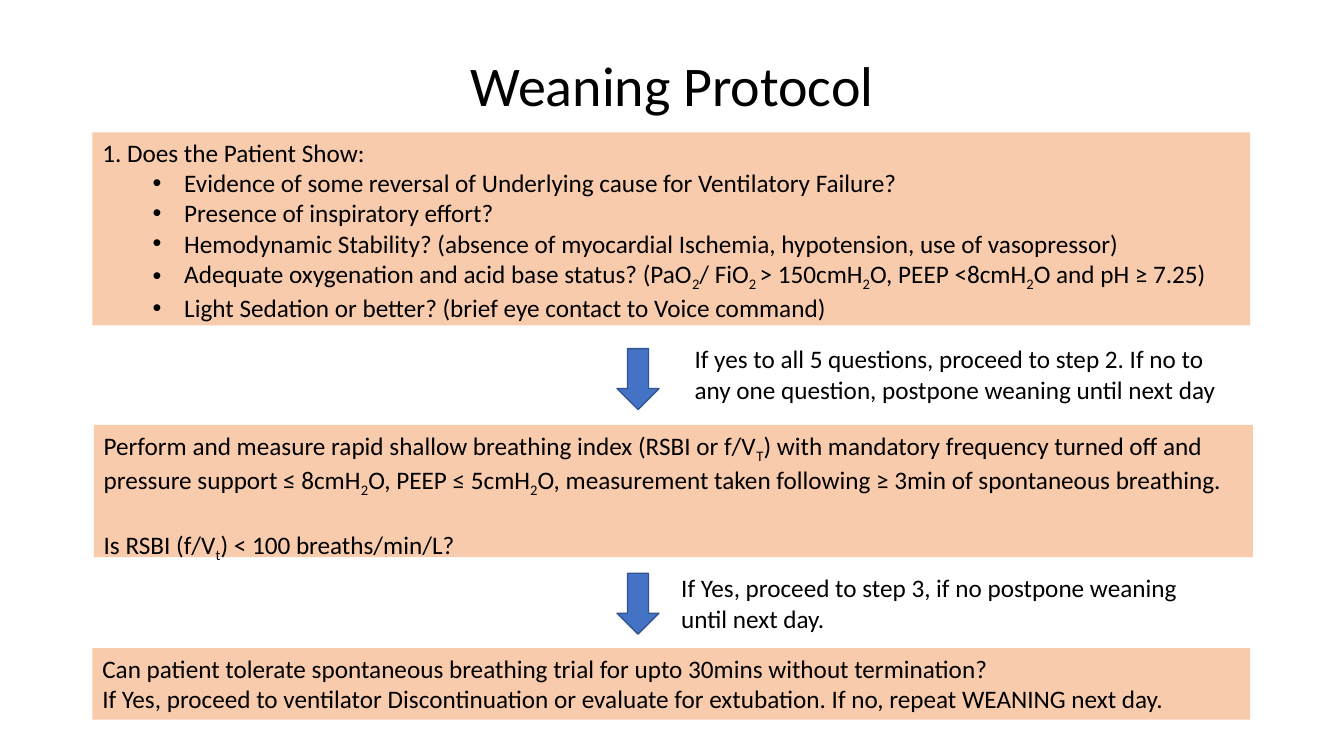
from lxml import etree
from pptx import Presentation
from pptx.dml.color import RGBColor
from pptx.enum.shapes import MSO_SHAPE
from pptx.enum.text import MSO_ANCHOR, PP_ALIGN
from pptx.oxml.ns import qn
from pptx.util import Pt

RECTANGLE = MSO_SHAPE.RECTANGLE
DOWN_ARROW = MSO_SHAPE.DOWN_ARROW
TOP, MIDDLE = MSO_ANCHOR.TOP, MSO_ANCHOR.MIDDLE
LEFT, CENTER = PP_ALIGN.LEFT, PP_ALIGN.CENTER

COLORS = {"text": "000000", "step": "F8CBAD", "arrow": "4472C4", "arrow_line": "325491"}
FONT = "Calibri"


def color(name):
    return RGBColor.from_string(COLORS[name])


def write_text(shape, lines, size=18, align=LEFT, anchor=TOP, line_spacing=1.0,
               bullets_from=None, last_gap=0):
    frame = shape.text_frame
    frame.word_wrap = True
    frame.vertical_anchor = anchor
    for index, line in enumerate(lines):
        paragraph = frame.paragraphs[0] if index == 0 else frame.add_paragraph()
        paragraph.alignment = align
        paragraph.line_spacing = line_spacing
        if last_gap and index == len(lines) - 1:
            paragraph.space_before = Pt(last_gap)
        if bullets_from is not None and index >= bullets_from:
            paragraph.level = 1
            properties = paragraph._p.get_or_add_pPr()
            properties.set("marL", str(Pt(58.5)))
            properties.set("indent", str(Pt(-22.5)))
            etree.SubElement(properties, qn("a:buFont")).set("typeface", "Arial")
            etree.SubElement(properties, qn("a:buChar")).set("char", "•")
        for position, part in enumerate(line.split("~")):
            run = paragraph.add_run()
            run.text = part
            run.font.size = Pt(size)
            run.font.name = FONT
            run.font.color.rgb = color("text")
            if position % 2:
                run.font._element.set("baseline", "-25000")


presentation = Presentation()
presentation.slide_width = Pt(960)
presentation.slide_height = Pt(540)
slide = presentation.slides.add_slide(presentation.slide_layouts[6])

title = slide.shapes.add_textbox(Pt(66), Pt(28.75), Pt(828), Pt(69))
write_text(title, ["Weaning Protocol"], size=40, align=CENTER, anchor=MIDDLE, line_spacing=0.9)

steps = [
    (66, 94.5, 827, 138, {"bullets_from": 1}, [
        "1. Does the Patient Show:",
        "Evidence of some reversal of Underlying cause for Ventilatory Failure?",
        "Presence of inspiratory effort?",
        "Hemodynamic Stability? (absence of myocardial Ischemia, hypotension, use of vasopressor)",
        "Adequate oxygenation and acid base status? "
        "(PaO~2~/ FiO~2 ~> 150cmH~2~O, PEEP <8cmH~2~O and pH ≥ 7.25)",
        "Light Sedation or better? (brief eye contact to Voice command)",
    ]),
    (67, 303.5, 828, 94.5, {"last_gap": 22}, [
        "Perform and measure rapid shallow breathing index (RSBI or f/V~T~) with mandatory "
        "frequency turned off and pressure support ≤ 8cmH~2~O, PEEP ≤ 5cmH~2~O, "
        "measurement taken following ≥ 3min of spontaneous breathing.",
        "Is RSBI (f/V~t~) < 100 breaths/min/L?",
    ]),
    (66, 463, 827, 51, {}, [
        "Can patient tolerate spontaneous breathing trial for upto 30mins without termination?",
        "If Yes, proceed to ventilator Discontinuation or evaluate for extubation. "
        "If no, repeat WEANING next day.",
    ]),
]
for left, top, width, height, text_format, lines in steps:
    step = slide.shapes.add_shape(RECTANGLE, Pt(left), Pt(top), Pt(width), Pt(height))
    step.shadow.inherit = False
    step.fill.solid()
    step.fill.fore_color.rgb = color("step")
    step.line.fill.background()
    write_text(step, lines, **text_format)

decisions = [
    (249, 489, 242, 389, "If yes to all 5 questions, proceed to step 2. "
                         "If no to any one question, postpone weaning until next day"),
    (409.5, 479.5, 405.5, 398, "If Yes, proceed to step 3, if no postpone weaning until next day."),
]
for arrow_top, left, top, width, text in decisions:
    arrow = slide.shapes.add_shape(DOWN_ARROW, Pt(440.75), Pt(arrow_top), Pt(30), Pt(43.5))
    arrow.shadow.inherit = False
    arrow.fill.solid()
    arrow.fill.fore_color.rgb = color("arrow")
    arrow.line.color.rgb = color("arrow_line")
    arrow.line.width = Pt(1)
    decision = slide.shapes.add_textbox(Pt(left), Pt(top), Pt(width), Pt(51))
    write_text(decision, [text])

presentation.save("out.pptx")
